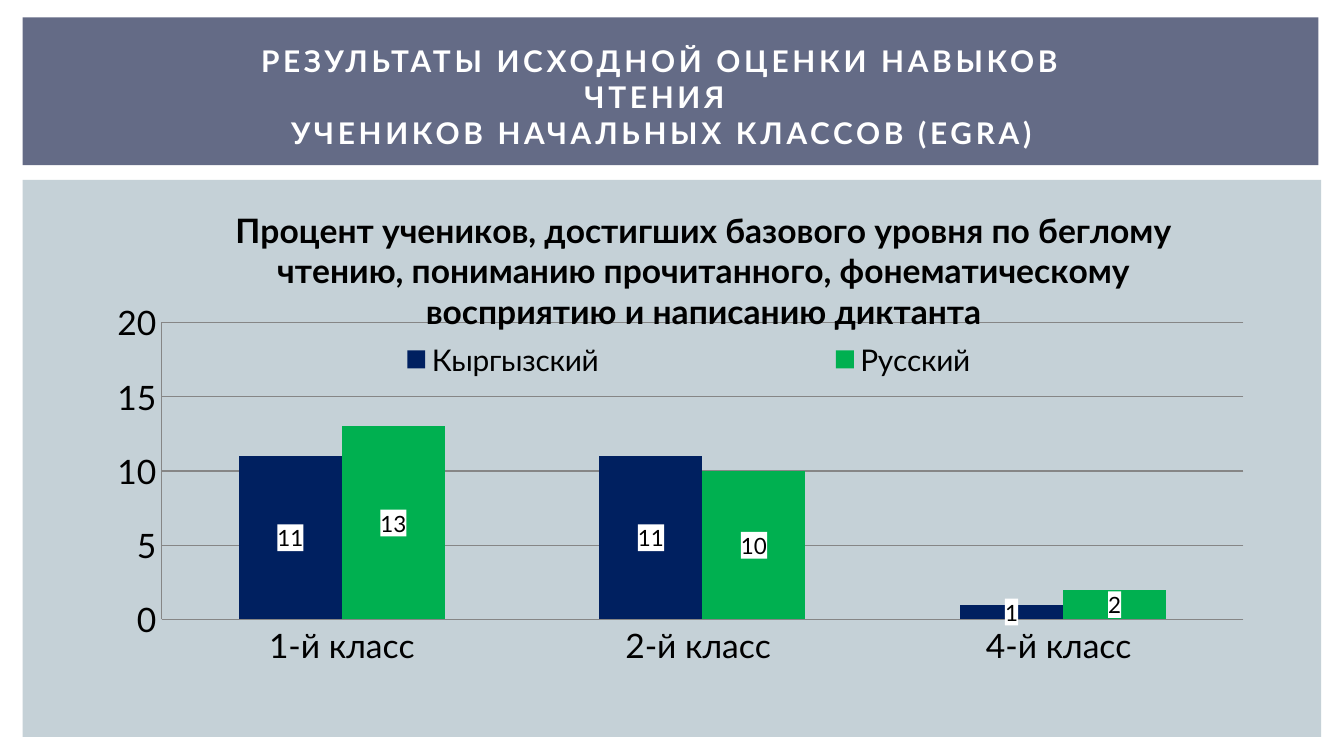
import pptx
import pptx.chart.data
import pptx.dml.color
import pptx.enum.chart
import pptx.enum.shapes
import pptx.enum.text
import pptx.oxml
import pptx.oxml.ns
import pptx.util
from pptx.util import Cm

FONT = "Lato"
AXIS_GREY = "868686"
CATEGORIES = ["1-й класс", "2-й класс ", "4-й класс "]
SERIES = [
    ("Кыргызский", [11, 11, 1], "002060"),
    ("Русский ", [13, 10, 2], "00B050"),
]
HEADING = [
    "РЕЗУЛЬТАТЫ ИСХОДНОЙ ОЦЕНКИ НАВЫКОВ ЧТЕНИЯ ",
    "УЧЕНИКОВ НАЧАЛЬНЫХ КЛАССОВ (EGRA)",
]
CHART_TITLE = (
    "Процент учеников, достигших базового уровня по беглому чтению, "
    "пониманию прочитанного, фонематическому восприятию и написанию диктанта"
)


def color(value):
    return pptx.dml.color.RGBColor.from_string(value)


def style_font(font, size, value="000000", bold=False):
    font.name = FONT
    font.size = pptx.util.Pt(size)
    font.bold = bold
    font.color.rgb = color(value)


def add_panel(page, left, top, width, height, value):
    panel = page.shapes.add_shape(
        pptx.enum.shapes.MSO_SHAPE.RECTANGLE, Cm(left), Cm(top), Cm(width), Cm(height)
    )
    panel.shadow.inherit = False
    panel.fill.solid()
    panel.fill.fore_color.rgb = color(value)
    panel.line.fill.background()


def add_heading(page):
    box = page.shapes.add_textbox(Cm(3.91), Cm(0.74), Cm(17.2), Cm(2.18))
    frame = box.text_frame
    frame.word_wrap = True
    frame.vertical_anchor = pptx.enum.text.MSO_ANCHOR.MIDDLE
    para = frame.paragraphs[0]
    para.alignment = pptx.enum.text.PP_ALIGN.CENTER
    for index, line in enumerate(HEADING):
        if index:
            para.add_line_break()
        span = para.add_run()
        span.text = line
        style_font(span.font, 16, "FFFFFF", True)
        span.font._element.set("spc", "200")


def make_layout(x, y, width=None, height=None, inner=False):
    settings = [("layoutTarget", "inner")] if inner else []
    settings += [("xMode", "edge"), ("yMode", "edge"), ("x", x), ("y", y)]
    if width:
        settings += [("w", width), ("h", height)]
    body = "".join(f'<c:{name} val="{value}"/>' for name, value in settings)
    return pptx.oxml.parse_xml(
        f'<c:layout {pptx.oxml.ns.nsdecls("c")}>'
        f"<c:manualLayout>{body}</c:manualLayout></c:layout>"
    )


def place(element, position, layout):
    for old in element.findall(pptx.oxml.ns.qn("c:layout")):
        element.remove(old)
    element.insert(position, layout)


def style_axis(axis):
    style_font(axis.tick_labels.font, 18)
    axis.major_tick_mark = pptx.enum.chart.XL_TICK_MARK.NONE
    axis.minor_tick_mark = pptx.enum.chart.XL_TICK_MARK.NONE
    axis.format.line.color.rgb = color(AXIS_GREY)


def style_series(series, value):
    series.format.fill.solid()
    series.format.fill.fore_color.rgb = color(value)
    labels = series.data_labels
    labels.show_value = True
    labels.number_format = "0"
    labels.number_format_is_linked = False
    labels.position = pptx.enum.chart.XL_LABEL_POSITION.CENTER
    style_font(labels.font, 12)
    background = pptx.oxml.parse_xml(
        f'<c:spPr {pptx.oxml.ns.nsdecls("c", "a")}><a:solidFill>'
        '<a:srgbClr val="FFFFFF"/></a:solidFill></c:spPr>'
    )
    labels._element.find(pptx.oxml.ns.qn("c:txPr")).addprevious(background)


def add_title(chart):
    chart.has_title = True
    para = chart.chart_title.text_frame.paragraphs[0]
    span = para.add_run()
    span.text = CHART_TITLE
    style_font(span.font, 18, bold=True)
    place(chart.chart_title._element, 1, make_layout(0.14, 0.02))


def add_legend(chart):
    chart.has_legend = True
    legend = chart.legend
    legend.position = pptx.enum.chart.XL_LEGEND_POSITION.RIGHT
    legend.include_in_layout = False
    style_font(legend.font, 16)
    place(legend._element, 1, make_layout(0.1, 0.3, 0.83, 0.1))


def add_results_chart(page):
    data = pptx.chart.data.CategoryChartData(number_format="0")
    data.categories = CATEGORIES
    for name, values, _ in SERIES:
        data.add_series(name, values)
    chart = page.shapes.add_chart(
        pptx.enum.chart.XL_CHART_TYPE.COLUMN_CLUSTERED,
        Cm(1.07), Cm(3.58), Cm(23.34), Cm(9.17), data,
    ).chart
    style_font(chart.font, 18)
    add_title(chart)
    add_legend(chart)
    plot = chart.plots[0]
    plot.gap_width = 150
    plot.vary_by_categories = False
    for series, (_, _, value) in zip(plot.series, SERIES):
        style_series(series, value)
    style_axis(chart.category_axis)
    axis = chart.value_axis
    style_axis(axis)
    axis.minimum_scale = 0
    axis.maximum_scale = 20
    axis.major_unit = 5
    axis.tick_labels.number_format = "0"
    axis.tick_labels.number_format_is_linked = False
    axis.has_major_gridlines = True
    axis.major_gridlines.format.line.color.rgb = color(AXIS_GREY)
    plot_area = plot._element.getparent()
    place(plot_area, 0, make_layout(0.085, 0.274, 0.876, 0.612, inner=True))


def main():
    deck = pptx.Presentation()
    deck.slide_width = Cm(25.4)
    deck.slide_height = Cm(14.28)
    page = deck.slides.add_slide(deck.slide_layouts[6])
    add_panel(page, 0.43, 3.4, 24.54, 10.52, "C5D1D7")
    add_panel(page, 0.43, 0.33, 24.49, 2.79, "646B86")
    add_heading(page)
    add_results_chart(page)
    deck.save("out.pptx")


if __name__ == "__main__":
    main()
